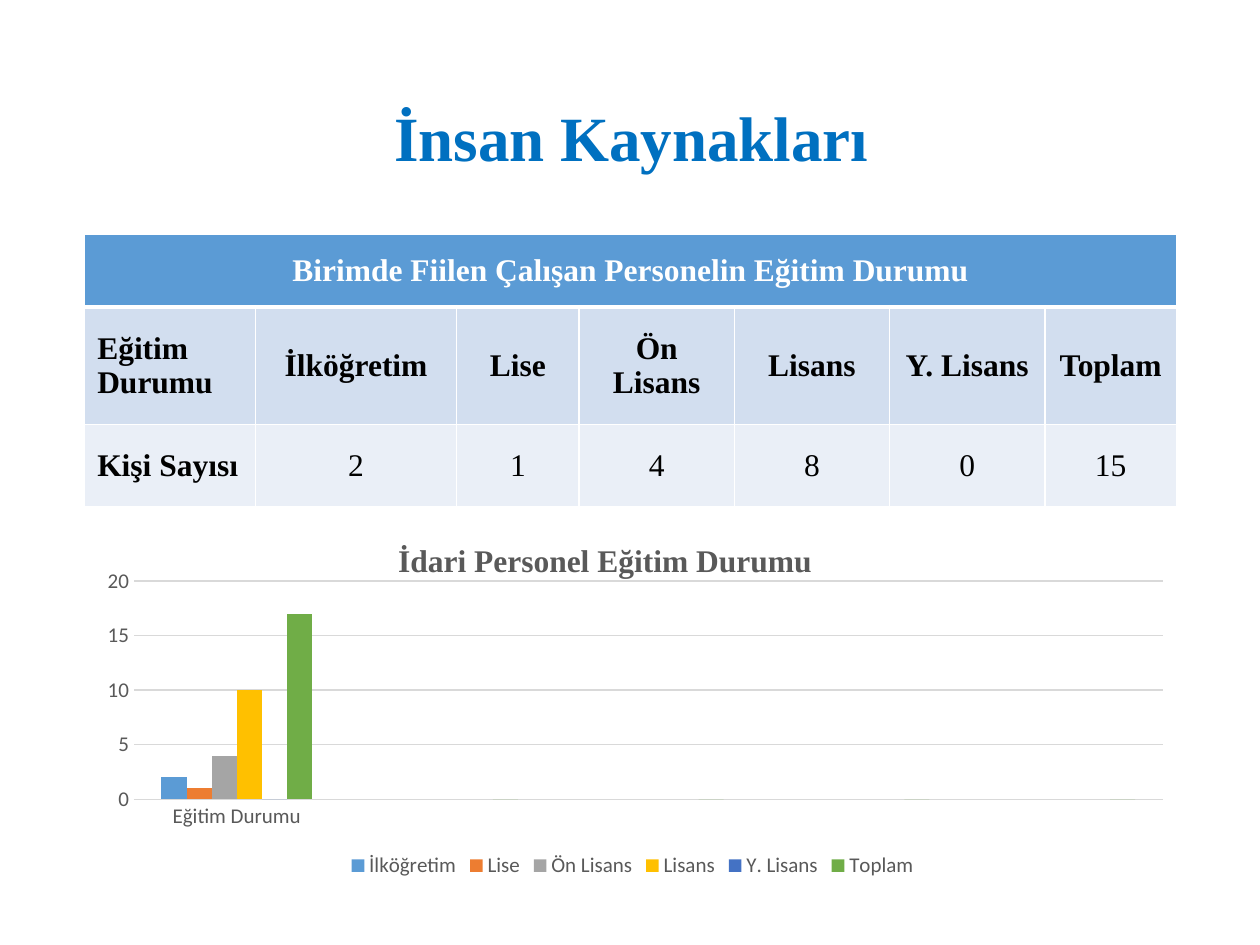
"""Build the human resources slide with its education table and chart."""
import pptx
import pptx.chart.data
import pptx.dml.color
import pptx.enum.chart
import pptx.enum.text
import pptx.oxml
import pptx.oxml.ns
import pptx.util

Pt = pptx.util.Pt
CENTER = pptx.enum.text.PP_ALIGN.CENTER
LEFT = pptx.enum.text.PP_ALIGN.LEFT
SERIF = "Times New Roman"
SANS = "Calibri"
COLORS = {
    "title": "0070C0", "header": "5B9BD5", "labels": "D2DEEF", "counts": "EAEFF7",
    "white": "FFFFFF", "black": "000000", "gray": "595959", "grid": "D9D9D9",
}

TITLE = "İnsan Kaynakları"
TABLE_TITLE = "Birimde Fiilen Çalışan Personelin Eğitim Durumu"
CHART_TITLE = "İdari Personel Eğitim Durumu"
LABELS = ["Eğitim Durumu", "İlköğretim", "Lise", "Ön Lisans", "Lisans", "Y. Lisans", "Toplam"]
COUNTS = ["Kişi Sayısı", "2", "1", "4", "8", "0", "15"]
COLUMN_WIDTHS = [97.6, 115, 70, 88.7, 88.7, 88.7, 75.3]
ROW_HEIGHTS = [41.5, 67, 47]
CATEGORIES = ["Eğitim Durumu", "", "", "", ""]
SERIES = [
    ("İlköğretim", [2, None, None, None, None], "5B9BD5"),
    ("Lise", [1, None, None, None, None], "ED7D31"),
    ("Ön Lisans", [4, None, None, None, None], "A5A5A5"),
    ("Lisans", [10, None, None, None, None], "FFC000"),
    ("Y. Lisans", [0, None, None, None, None], "4472C4"),
    ("Toplam", [17, 0, 0, 0, 0], "70AD47"),
]


def rgb(name):
    return pptx.dml.color.RGBColor.from_string(COLORS.get(name, name))


def style_font(font, size, color, name=SANS, bold=False):
    font.size, font.name, font.bold = Pt(size), name, bold
    font.color.rgb = rgb(color)


def write(frame, text, size=18, color="black", bold=True, align=CENTER):
    paragraph = frame.paragraphs[0]
    paragraph.alignment = align
    run = paragraph.add_run()
    run.text = text
    style_font(run.font, size, color, SERIF, bold)


def set_borders(cell, bottom):
    properties = cell._tc.get_or_add_tcPr()
    widths = {"lnL": 1, "lnR": 1, "lnT": 1, "lnB": bottom}
    for index, (tag, width) in enumerate(widths.items()):
        properties.insert(index, pptx.oxml.parse_xml(
            f'<a:{tag} {pptx.oxml.ns.nsdecls("a")} w="{Pt(width)}"><a:solidFill>'
            f'<a:srgbClr val="{COLORS["white"]}"/></a:solidFill></a:{tag}>'))


def fill_cell(cell, text, fill, bottom=1, **text_format):
    cell.fill.solid()
    cell.fill.fore_color.rgb = rgb(fill)
    cell.vertical_anchor = pptx.enum.text.MSO_ANCHOR.MIDDLE
    set_borders(cell, bottom)
    write(cell.text_frame, text, **text_format)


def add_title(slide):
    box = slide.shapes.add_textbox(Pt(36.7), Pt(52), Pt(648), Pt(52))
    box.text_frame.word_wrap = True
    box.text_frame.vertical_anchor = pptx.enum.text.MSO_ANCHOR.MIDDLE
    write(box.text_frame, TITLE, size=36, color="title")


def add_education_table(slide):
    table = slide.shapes.add_table(
        len(ROW_HEIGHTS), len(COLUMN_WIDTHS), Pt(48.4), Pt(134),
        Pt(sum(COLUMN_WIDTHS)), Pt(sum(ROW_HEIGHTS))).table
    for column, width in zip(table.columns, COLUMN_WIDTHS):
        column.width = Pt(width)
    for row, height in zip(table.rows, ROW_HEIGHTS):
        row.height = Pt(height)
    table.cell(0, 0).merge(table.cell(0, len(LABELS) - 1))
    fill_cell(table.cell(0, 0), TABLE_TITLE, "header", bottom=3, color="white")
    for index, (label, count) in enumerate(zip(LABELS, COUNTS)):
        align = CENTER if index else LEFT
        fill_cell(table.cell(1, index), label, "labels", align=align)
        fill_cell(table.cell(2, index), count, "counts", align=align, bold=index == 0)


def set_layout(parent, position, x, y, width=None, height=None, target=""):
    for old in parent.findall(pptx.oxml.ns.qn("c:layout")):
        parent.remove(old)
    size = f'<c:w val="{width}"/><c:h val="{height}"/>' if width else ""
    parent.insert(position, pptx.oxml.parse_xml(
        f'<c:layout {pptx.oxml.ns.nsdecls("c")}><c:manualLayout>{target}'
        f'<c:xMode val="edge"/><c:yMode val="edge"/><c:x val="{x}"/><c:y val="{y}"/>'
        f'{size}</c:manualLayout></c:layout>'))


def style_axes(chart):
    for axis in (chart.category_axis, chart.value_axis):
        axis.major_tick_mark = pptx.enum.chart.XL_TICK_MARK.NONE
        axis.minor_tick_mark = pptx.enum.chart.XL_TICK_MARK.NONE
        style_font(axis.tick_labels.font, 12, "gray")
    chart.value_axis.format.line.fill.background()
    chart.value_axis.minimum_scale = 0
    chart.value_axis.maximum_scale = 20
    chart.value_axis.major_unit = 5
    for part in (chart.category_axis, chart.value_axis.major_gridlines):
        part.format.line.color.rgb = rgb("grid")
        part.format.line.width = Pt(0.75)


def add_education_chart(slide):
    data = pptx.chart.data.CategoryChartData()
    data.categories = CATEGORIES
    for name, values, _ in SERIES:
        data.add_series(name, values)
    chart = slide.shapes.add_chart(
        pptx.enum.chart.XL_CHART_TYPE.COLUMN_CLUSTERED,
        Pt(49.7), Pt(295.2), Pt(623.5), Pt(209.5), data).chart
    style_font(chart.font, 10, "black")
    chart.has_title = True
    write(chart.chart_title.text_frame, CHART_TITLE, color="gray")
    chart.chart_title.include_in_layout = False
    set_layout(chart.chart_title._element, 1, 0.28, 0.05)
    set_layout(chart._chartSpace.chart.plotArea, 0, 0.043, 0.176, 0.943, 0.595,
               '<c:layoutTarget val="inner"/>')
    chart.has_legend = True
    chart.legend.position = pptx.enum.chart.XL_LEGEND_POSITION.BOTTOM
    chart.legend.include_in_layout = False
    style_font(chart.legend.font, 12, "gray")
    style_axes(chart)
    plot = chart.plots[0]
    plot.gap_width, plot.overlap, plot.vary_by_categories = 219, 0, False
    for series, (_, _, color) in zip(plot.series, SERIES):
        series.format.fill.solid()
        series.format.fill.fore_color.rgb = rgb(color)


def main():
    presentation = pptx.Presentation()
    presentation.slide_width, presentation.slide_height = Pt(720), Pt(540)
    slide = presentation.slides.add_slide(presentation.slide_layouts[6])
    add_title(slide)
    add_education_table(slide)
    add_education_chart(slide)
    presentation.save("out.pptx")


if __name__ == "__main__":
    main()
